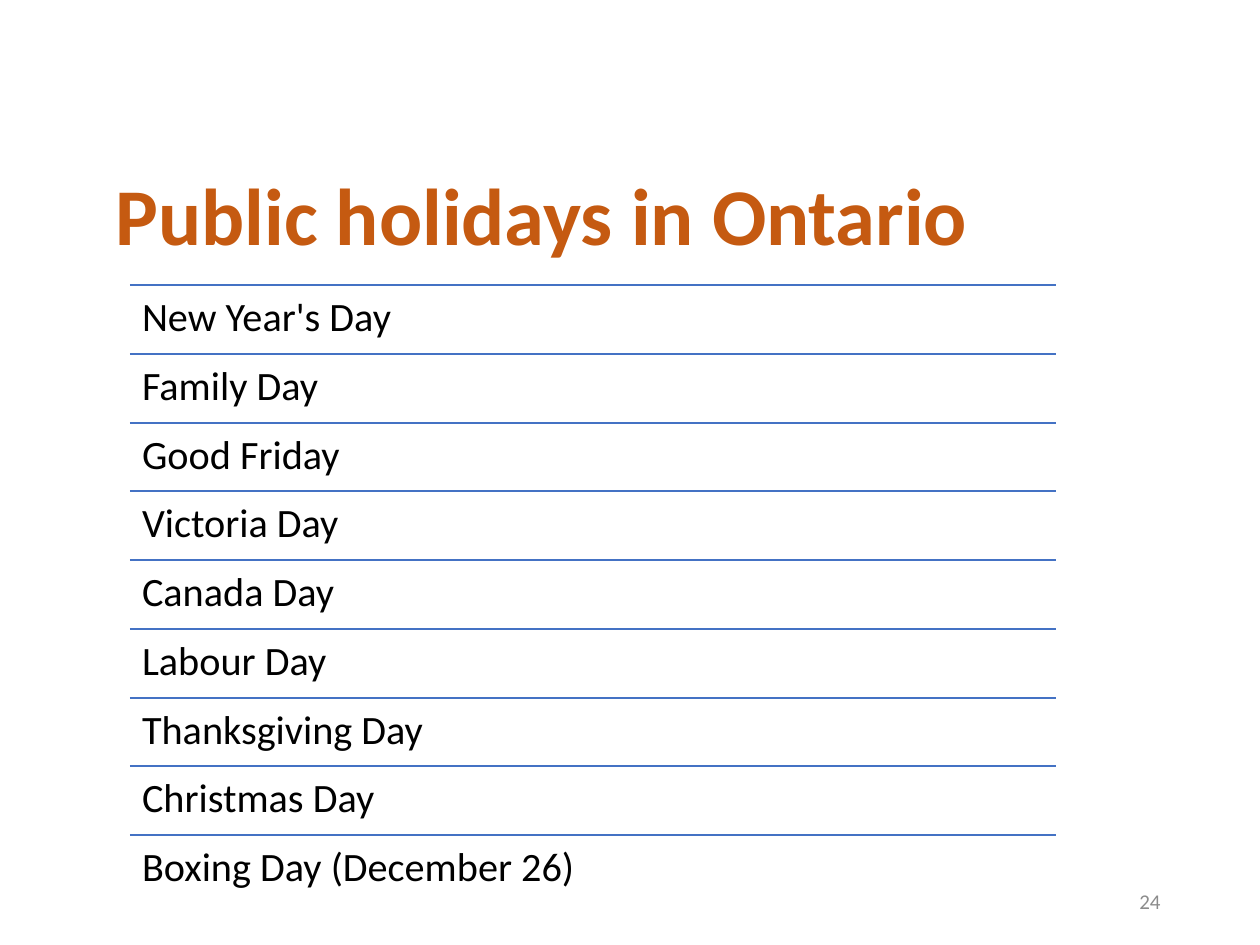
from lxml import etree
from pptx import Presentation
from pptx import util as u
from pptx.dml.color import RGBColor
from pptx.enum import shapes, text
from pptx.oxml.ns import qn

TITLE = "Public holidays in Ontario"
DAYS = [
    "New Year's Day", "Family Day", "Good Friday", "Victoria Day",
    "Canada Day", "Labour Day", "Thanksgiving Day", "Christmas Day",
    "Boxing Day (December 26)",
]
PAGE = "24"

FONT = "Calibri"
RUST = RGBColor(0xC5, 0x5A, 0x11)
BLUE = RGBColor(0x44, 0x72, 0xC4)
BLACK = RGBColor(0, 0, 0)
GRAY = RGBColor(0x8C, 0x8C, 0x8C)

LEFT, TOP, WIDTH, HEIGHT = 130, 285, 926, 619
PAD = 12


def px(n):
    return u.Emu(n * u.Inches(1) // 126)


def write(box, words, size, color, anchor, align=text.PP_ALIGN.LEFT, bold=False):
    frame = box.text_frame
    frame.word_wrap = True
    frame.auto_size = text.MSO_AUTO_SIZE.NONE
    frame.vertical_anchor = anchor
    frame.text = words
    para = frame.paragraphs[0]
    para.alignment = align
    font = para.font
    font.name, font.size, font.bold = FONT, u.Pt(size), bold
    font.color.rgb = color
    return frame


def add_rule(slide, y):
    rule = slide.shapes.add_connector(
        shapes.MSO_CONNECTOR.STRAIGHT, px(LEFT), px(y), px(LEFT + WIDTH), px(y))
    rule.line.color.rgb = BLUE
    rule.line.width = u.Pt(1)
    etree.SubElement(rule._element.spPr, qn("a:effectLst"))


def add_day(slide, day, y, high):
    box = slide.shapes.add_textbox(px(LEFT), px(y), px(WIDTH), px(high))
    frame = write(box, day, 23, BLACK, text.MSO_ANCHOR.TOP)
    frame.margin_left = frame.margin_right = px(PAD)
    frame.margin_top = frame.margin_bottom = px(PAD)
    frame.paragraphs[0].line_spacing = 0.9


def main():
    deck = Presentation()
    deck.slide_width, deck.slide_height = px(1260), px(945)
    slide = deck.slides.add_slide(deck.slide_layouts[5])

    title = slide.shapes.title
    title.left, title.top, title.width, title.height = map(px, (103, 178, 1086, 91))
    frame = write(title, TITLE, 46, RUST, text.MSO_ANCHOR.BOTTOM, bold=True)
    frame.paragraphs[0].line_spacing = 0.9

    edges = [TOP + round(i * HEIGHT / len(DAYS)) for i in range(len(DAYS) + 1)]
    for day, y, end in zip(DAYS, edges, edges[1:]):
        add_rule(slide, y)
        add_day(slide, day, y, end - y)

    page = slide.shapes.add_textbox(px(890), px(876), px(283), px(50))
    write(page, PAGE, 12, GRAY, text.MSO_ANCHOR.MIDDLE, text.PP_ALIGN.RIGHT)

    deck.save("out.pptx")


if __name__ == "__main__":
    main()
